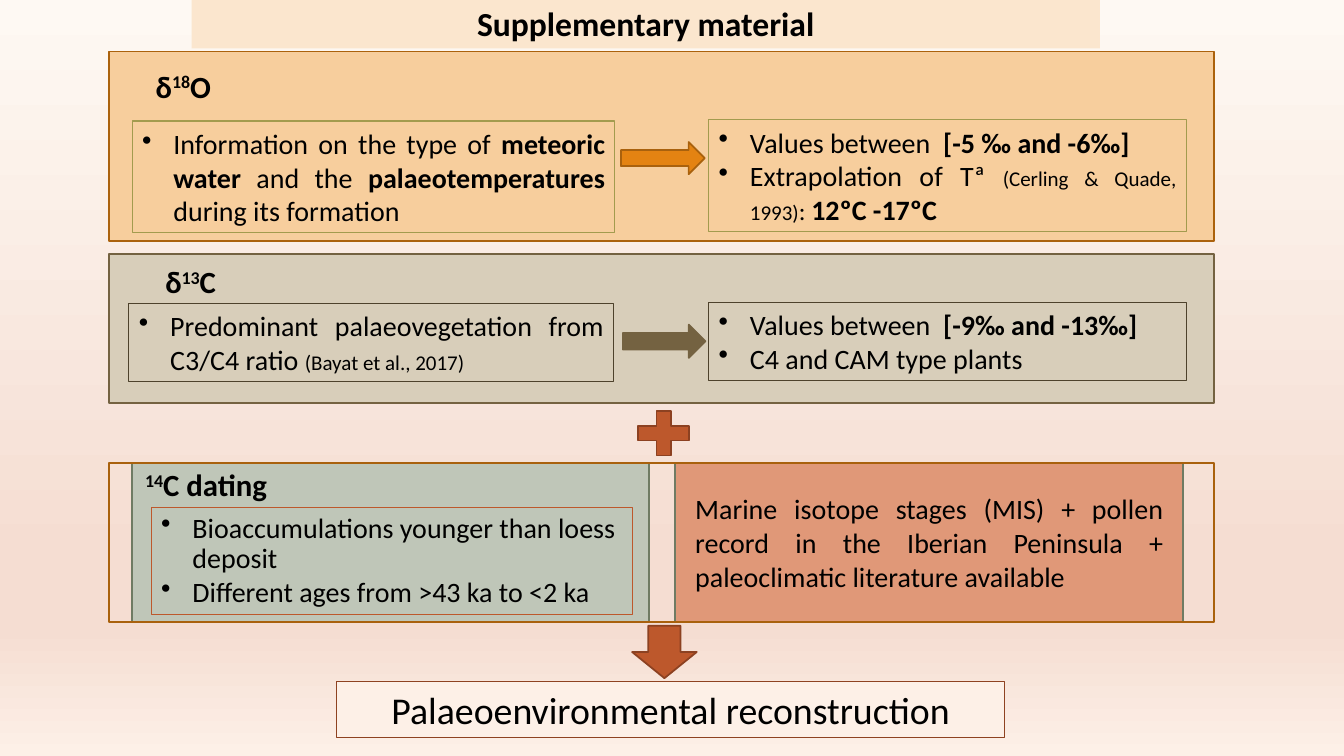
from copy import deepcopy

from pptx import Presentation
from pptx import util as u
from pptx.dml.color import RGBColor
from pptx.enum import shapes, text
from pptx.oxml.ns import qn

SHAPE = shapes.MSO_SHAPE
ALIGN = text.PP_ALIGN


def colour(value):
    return RGBColor.from_string(value)


def bold(words):
    return words, {"bold": True}


def small(words, size=15):
    return words, {"size": size}


def raised(words):
    return words, {"raised": True}


class Board:
    font = "Calibri"
    ink = "000000"

    def __init__(self, deck):
        self.page = deck.slides.add_slide(deck.slide_layouts[6])

    def background(self, stops):
        fill = self.page.background.fill
        fill.gradient()
        fill.gradient_angle = 270
        stop_list = self.page._element.xpath(".//a:gsLst")[0]
        while len(stop_list) < len(stops):
            stop_list.append(deepcopy(stop_list[0]))
        for stop, (position, value) in zip(fill.gradient_stops, stops):
            stop.position = position
            stop.color.rgb = colour(value)

    def shape(self, place, fill=None, line=None, width=1.25, kind=SHAPE.RECTANGLE):
        shape = self.page.shapes.add_shape(kind, *map(u.Cm, place))
        shape.shadow.inherit = False
        if fill:
            shape.fill.solid()
            shape.fill.fore_color.rgb = colour(fill)
        else:
            shape.fill.background()
        if line:
            shape.line.color.rgb = colour(line)
            shape.line.width = u.Pt(width)
        else:
            shape.line.fill.background()
        return shape

    def label(self, place, *spans):
        box = self.page.shapes.add_textbox(*map(u.Cm, place))
        self.wording(box, [spans], size=22, strong=True)

    def wording(self, box, paras, size=20, align=ALIGN.CENTER, strong=False, bullets=False):
        frame = box.text_frame
        frame.word_wrap = True
        frame.vertical_anchor = text.MSO_ANCHOR.MIDDLE
        for index, spans in enumerate(paras):
            para = frame.add_paragraph() if index else frame.paragraphs[0]
            para.alignment = align
            para.font.name = self.font
            para.font.size = u.Pt(size)
            para.font.bold = strong
            para.font.color.rgb = colour(self.ink)
            if bullets:
                self.bullet(para)
            for item in spans:
                words, style = (item, {}) if isinstance(item, str) else item
                span = para.add_run()
                span.text = words
                if "size" in style:
                    span.font.size = u.Pt(style["size"])
                if "bold" in style:
                    span.font.bold = True
                if "raised" in style:
                    span.font._element.set("baseline", "30000")
        return frame

    def bullet(self, para):
        properties = para._p.get_or_add_pPr()
        indent = u.Cm(0.79)
        properties.set("marL", str(indent))
        properties.set("indent", str(-indent))
        mark = properties.makeelement(qn("a:buChar"), {"char": "•"})
        properties.insert_element_before(mark, "a:tabLst", "a:defRPr", "a:extLst")

    def listing(self, place, line, paras, align=ALIGN.JUSTIFY):
        box = self.shape(place, line=line, width=0.75)
        return self.wording(box, paras, align=align, bullets=True)


def main():
    deck = Presentation()
    deck.slide_width, deck.slide_height = u.Cm(33.87), u.Cm(19.05)
    board = Board(deck)
    board.background([(0, "FEF9F3"), (0.74, "F5DDD2"), (0.83, "F5DDD2"), (1, "FDF0E7")])

    left, wide = 2.74, 27.86
    result_left, result_wide = 17.86, 12.04
    lower_top, lower_high = 11.66, 4.01
    olive, brown, umber = "A39B4E", "4E422C", "746241"
    rust, dark_rust, sage = "BD582C", "8C4121", "6F7B63"

    board.shape((left, 1.3, wide, 4.78), "F7CE9D", "AB620D")
    board.label((1.98, 1.57, 5.28, 1.19), "δ", raised("18"), "O")
    board.listing((3.33, 3.05, 12.17, 2.82), olive, [
        ["Information on the type of ", bold("meteoric water "), "and the ",
         bold("palaeotemperatures"), " during its formation"]])
    board.listing((result_left, 3.02, result_wide, 2.82), olive, [
        ["Values between ", bold(" [-5 ‰ and -6‰]")],
        ["Extrapolation of Tª ", small("(Cerling & Quade, 1993)"),
         small(": ", 18), bold("12ºC -17ºC ")]])
    board.shape((15.65, 3.58, 2.11, 0.81), "E48312", "A9610D", kind=SHAPE.RIGHT_ARROW)

    board.shape((left, 6.4, wide, 3.76), "D8CEBA", umber)
    board.label((1.63, 6.5, 6.35, 1.19), "δ", raised("13"), "C")
    board.listing((3.25, 7.65, 12.22, 1.96), brown, [
        ["Predominant palaeovegetation from C3/C4 ratio ",
         small("(Bayat et al., 2017)"), small(" ", 18)]])
    board.listing((result_left, 7.62, result_wide, 1.96), brown, [
        ["Values between ", bold(" [-9‰ and -13‰]")],
        ["C4 and CAM type plants "]])
    board.shape((15.7, 8.18, 2.08, 0.84), umber, umber, kind=SHAPE.RIGHT_ARROW)

    board.shape((3.33, lower_top, 13.03, lower_high), "BFC6B8", sage)
    board.label((3.07, 11.61, 4.42, 1.19), raised("14"), "C dating ")
    dating = board.listing((3.81, 12.8, 12.14, 2.69), rust, [
        ["Bioaccumulations younger than loess deposit"],
        ["Different ages from >43 ka to <2 ka"]], ALIGN.LEFT)
    for para in dating.paragraphs:
        para.line_spacing = 0.9
        para.space_after = u.Pt(3)

    board.shape((15.85, 10.16, 1.75, 1.52), rust, dark_rust, kind=SHAPE.MATH_PLUS)
    outcome = board.shape((8.48, 17.17, 16.84, 1.42), "FDF0E7", "8E4221", 0.75)
    board.wording(outcome, [["Palaeoenvironmental reconstruction"]], size=27)
    board.shape((15.93, 15.77, 1.63, 1.32), rust, dark_rust, kind=SHAPE.DOWN_ARROW)

    marine = board.shape((17.02, lower_top, 12.8, lower_high), "E09878", sage)
    frame = board.wording(marine, [[
        "Marine isotope stages (MIS) + pollen record in the Iberian Peninsula "
        "+ paleoclimatic literature available"]], align=ALIGN.JUSTIFY)
    frame.margin_left = frame.margin_right = u.Cm(0.5)
    board.shape((left, lower_top, wide, lower_high), line="A9610D")

    title = board.shape((4.83, -0.05, 22.89, 1.27), "FBE6CE")
    board.wording(title, [["Supplementary material"]], size=24, strong=True)
    deck.save("out.pptx")


if __name__ == "__main__":
    main()
